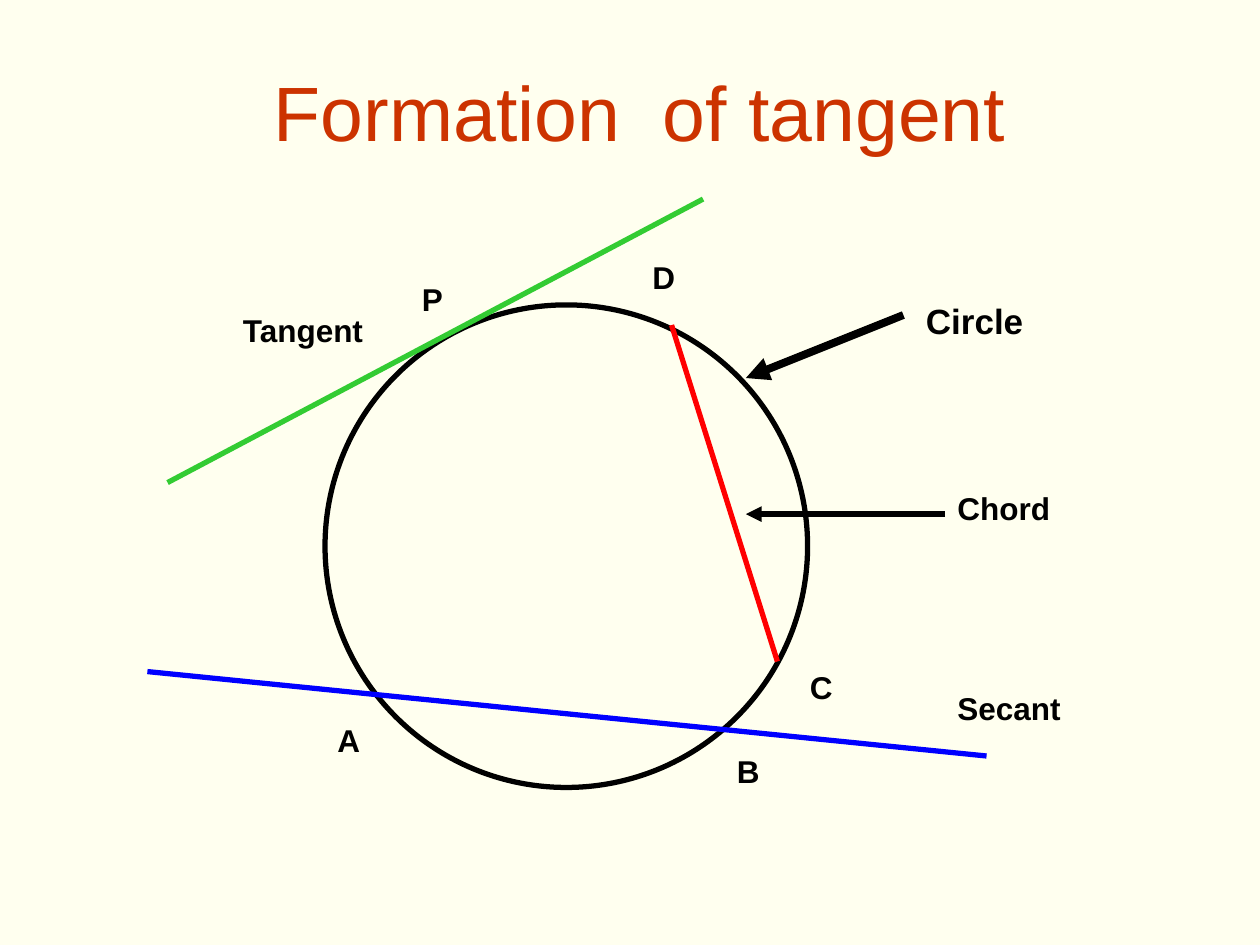
from pptx import Presentation
from pptx.dml.color import RGBColor
from pptx.enum.shapes import MSO_CONNECTOR as CONN, MSO_SHAPE as SHAPE
from pptx.enum.text import MSO_ANCHOR as ANCHOR, MSO_AUTO_SIZE as FIT, PP_ALIGN as ALIGN
from pptx.oxml.ns import qn
from pptx.util import Inches, Pt
from lxml.etree import SubElement

COLORS = {
    "paper": "FFFFEF",
    "title": "CC3300",
    "ink": "000000",
    "secant": "0000FF",
    "chord": "FF0000",
    "tangent": "33CC33",
}


class Diagram:
    font = "Arial"

    def __init__(self, s):
        self.s = s
        fill = s.background.fill
        fill.solid()
        fill.fore_color.rgb = self.color("paper")

    def color(self, name):
        return RGBColor.from_string(COLORS[name])

    def add_text(self, tf, text, color, align, **formats):
        p = tf.paragraphs[0]
        p.alignment = align
        r = p.add_run()
        r.text = text
        for key, value in {"name": self.font, **formats}.items():
            setattr(r.font, key, value)
        r.font.color.rgb = self.color(color)

    def title(self, text, x, y, w, h, indent):
        sp = self.s.shapes.title
        sp.left, sp.top, sp.width, sp.height = map(Inches, (x, y, w, h))
        tf = sp.text_frame
        tf.vertical_anchor = ANCHOR.MIDDLE
        tf.margin_left = Inches(indent)
        self.add_text(tf, text, "title", ALIGN.CENTER, size=Pt(44), bold=False)

    def circle(self, x, y, d):
        sp = self.s.shapes.add_shape(SHAPE.OVAL, *map(Inches, (x, y, d, d)))
        sp.shadow.inherit = False
        sp.fill.background()
        sp.line.color.rgb = self.color("ink")
        sp.line.width = Pt(3)

    def label(self, text, x, y, w, h=0.4, size=18, parent=None):
        shapes = (parent or self.s).shapes
        tf = shapes.add_textbox(*map(Inches, (x, y, w, h))).text_frame
        tf.word_wrap = True
        tf.auto_size = FIT.SHAPE_TO_FIT_TEXT
        self.add_text(tf, text, "ink", ALIGN.LEFT, size=Pt(size), bold=True)

    def line(self, start, end, color, width=3, arrow=False, parent=None):
        shapes = (parent or self.s).shapes
        sp = shapes.add_connector(CONN.STRAIGHT, *map(Inches, start + end))
        sp.line.color.rgb = self.color(color)
        sp.line.width = Pt(width)
        spPr = sp._element.spPr
        if arrow:
            SubElement(spPr.find(qn("a:ln")), qn("a:tailEnd"), type="triangle")
        SubElement(spPr, qn("a:effectLst"))

    def pointer(self, label, start, end, width):
        group = self.s.shapes.add_group_shape()
        self.label(**label, parent=group)
        self.line(start, end, "ink", width, arrow=True, parent=group)


def main():
    prs = Presentation()
    prs.slide_width, prs.slide_height = Inches(10), Inches(7.5)
    d = Diagram(prs.slides.add_slide(prs.slide_layouts[5]))

    d.title("Formation  of tangent", 0.25, 0.25, 9, 1.25, indent=0.76)
    d.circle(2.58, 2.42, 3.83)
    d.pointer(dict(text="Circle", x=7.25, y=2.33, w=1.08, h=0.43, size=20),
              (7.17, 2.5), (5.92, 3), 4.5)

    d.line((1.17, 5.33), (7.83, 6), "secant")
    d.label("A", 2.58, 5.67, 0.42)
    d.label("B", 5.75, 5.92, 0.42)
    d.label("Secant", 7.5, 5.42, 1.25)

    d.line((5.33, 2.58), (6.17, 5.25), "chord")
    d.label("C", 6.33, 5.25, 0.42)
    d.label("D", 5.08, 2, 0.5)
    d.pointer(dict(text="Chord", x=7.5, y=3.83, w=1.08), (7.5, 4.08), (5.92, 4.08), 3)

    d.line((1.33, 3.83), (5.58, 1.58), "tangent")
    d.label("P", 3.25, 2.17, 0.33)
    d.label("Tangent", 1.83, 2.42, 1.25)

    prs.save("out.pptx")


if __name__ == "__main__":
    main()
